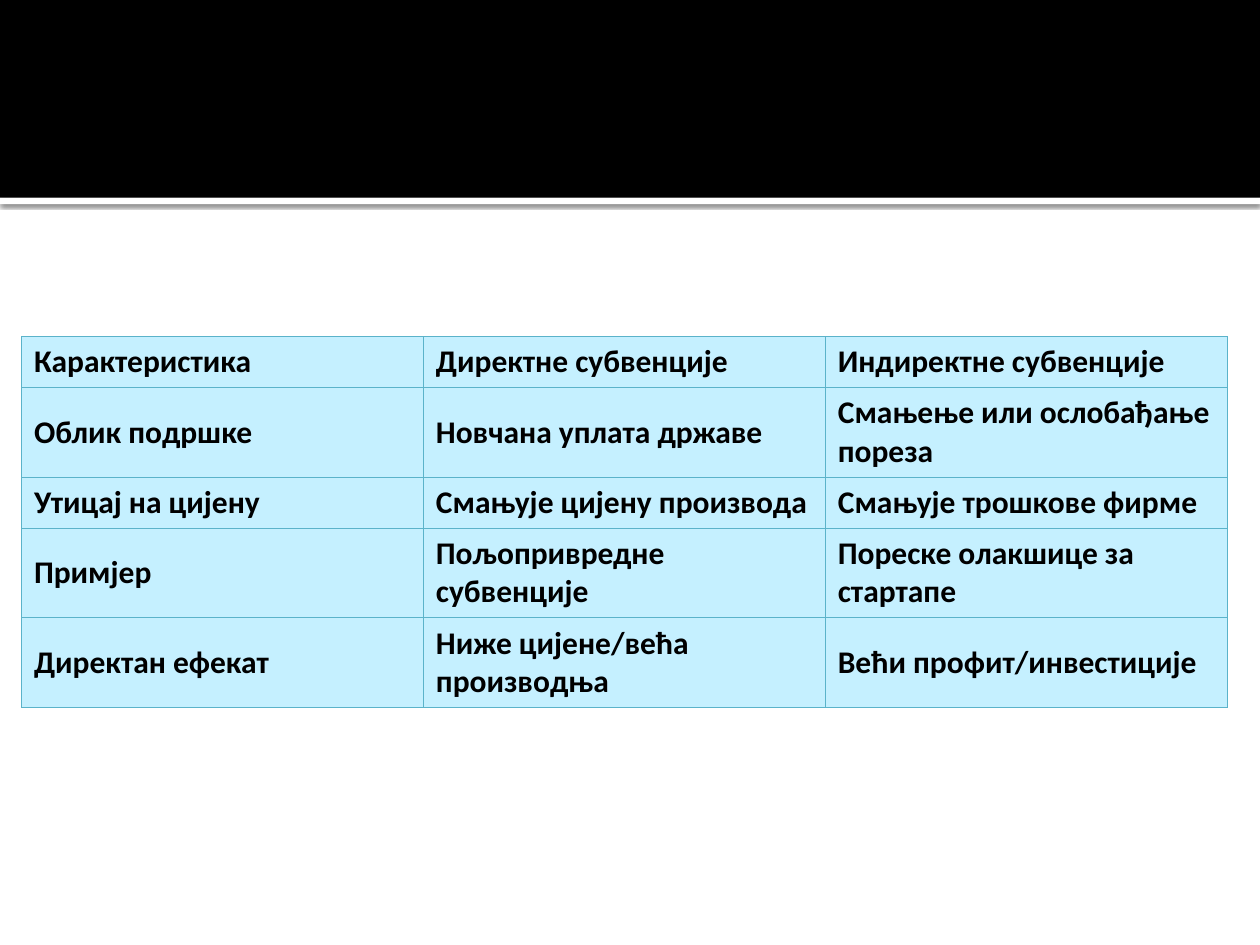
from dataclasses import dataclass

from lxml.etree import SubElement
from pptx import Presentation
from pptx.dml.color import RGBColor
from pptx.enum.shapes import MSO_SHAPE
from pptx.enum.text import MSO_ANCHOR
from pptx.oxml.ns import qn
from pptx.util import Inches, Pt


@dataclass(frozen=True)
class Theme:
    """Colours, font and sizes of the slide."""
    band: str = "000000"
    rule: str = "FFFFFF"
    shadow: str = "000000"
    text: str = "000000"
    cell: str = "C5F0FF"
    border: str = "5BB3CA"
    font: str = "Calibri"
    text_size: float = 18
    border_width: float = 0.5


THEME = Theme()
COLUMN_WIDTH = 3.19
ONE_LINE, TWO_LINES = 0.4, 0.71
ROWS = [
    (ONE_LINE, ("Карактеристика", "Директне субвенције", "Индиректне субвенције")),
    (TWO_LINES, ("Облик подршке", "Новчана уплата државе", "Смањење или ослобађање пореза")),
    (ONE_LINE, ("Утицај на цијену", "Смањује цијену производа", "Смањује трошкове фирме")),
    (TWO_LINES, ("Примјер", "Пољопривредне субвенције", "Пореске олакшице за стартапе")),
    (TWO_LINES, ("Директан ефекат", "Ниже цијене/већа производња", "Већи профит/инвестиције")),
]


def add_strip(page, top, height, color):
    """Add a borderless full-width rectangle."""
    strip = page.shapes.add_shape(
        MSO_SHAPE.RECTANGLE, 0, Inches(top), Inches(10), Inches(height))
    strip.shadow.inherit = False
    strip.fill.solid()
    strip.fill.fore_color.rgb = RGBColor.from_string(color)
    strip.line.fill.background()
    return strip


def add_shadow(shape):
    """Give a shape a soft shadow falling straight down."""
    effects = shape._element.spPr.find(qn("a:effectLst"))
    shadow = SubElement(effects, qn("a:outerShdw"), blurRad=str(Pt(2.5)),
                        dist=str(Pt(0.8)), dir="5400000", algn="tl", rotWithShape="0")
    color = SubElement(shadow, qn("a:srgbClr"), val=THEME.shadow)
    SubElement(color, qn("a:alpha"), val="60000")


def add_borders(cell):
    """Draw a thin line on all four sides of a cell."""
    properties = cell._tc.get_or_add_tcPr()
    for position, side in enumerate(("a:lnL", "a:lnR", "a:lnT", "a:lnB")):
        line = SubElement(properties, qn(side), w=str(Pt(THEME.border_width)))
        fill = SubElement(line, qn("a:solidFill"))
        SubElement(fill, qn("a:srgbClr"), val=THEME.border)
        properties.insert(position, line)


def fill_cell(cell, text):
    """Write and style one table cell."""
    cell.vertical_anchor = MSO_ANCHOR.MIDDLE
    cell.fill.solid()
    cell.fill.fore_color.rgb = RGBColor.from_string(THEME.cell)
    add_borders(cell)
    span = cell.text_frame.paragraphs[0].add_run()
    span.text = text
    span.font.name = THEME.font
    span.font.size = Pt(THEME.text_size)
    span.font.bold = True
    span.font.color.rgb = RGBColor.from_string(THEME.text)


def add_comparison_table(page, left, top):
    """Add the table that compares the two kinds of subsidy."""
    column_count = len(ROWS[0][1])
    height = sum(row_height for row_height, _ in ROWS)
    table = page.shapes.add_table(
        len(ROWS), column_count, Inches(left), Inches(top),
        Inches(COLUMN_WIDTH * column_count), Inches(height)).table
    table.first_row = False
    table.horz_banding = False
    for column in table.columns:
        column.width = Inches(COLUMN_WIDTH)
    for row, (row_height, texts) in zip(table.rows, ROWS):
        row.height = Inches(row_height)
        for cell, text in zip(row.cells, texts):
            fill_cell(cell, text)


def main():
    """Build and save the slide."""
    deck = Presentation()
    deck.slide_width, deck.slide_height = Inches(10), Inches(7.5)
    page = deck.slides.add_slide(deck.slide_layouts[6])
    add_shadow(add_strip(page, 1.57, 0.05, THEME.rule))
    add_strip(page, 0, 1.57, THEME.band)
    add_comparison_table(page, 0.17, 2.67)
    deck.save("out.pptx")


if __name__ == "__main__":
    main()
